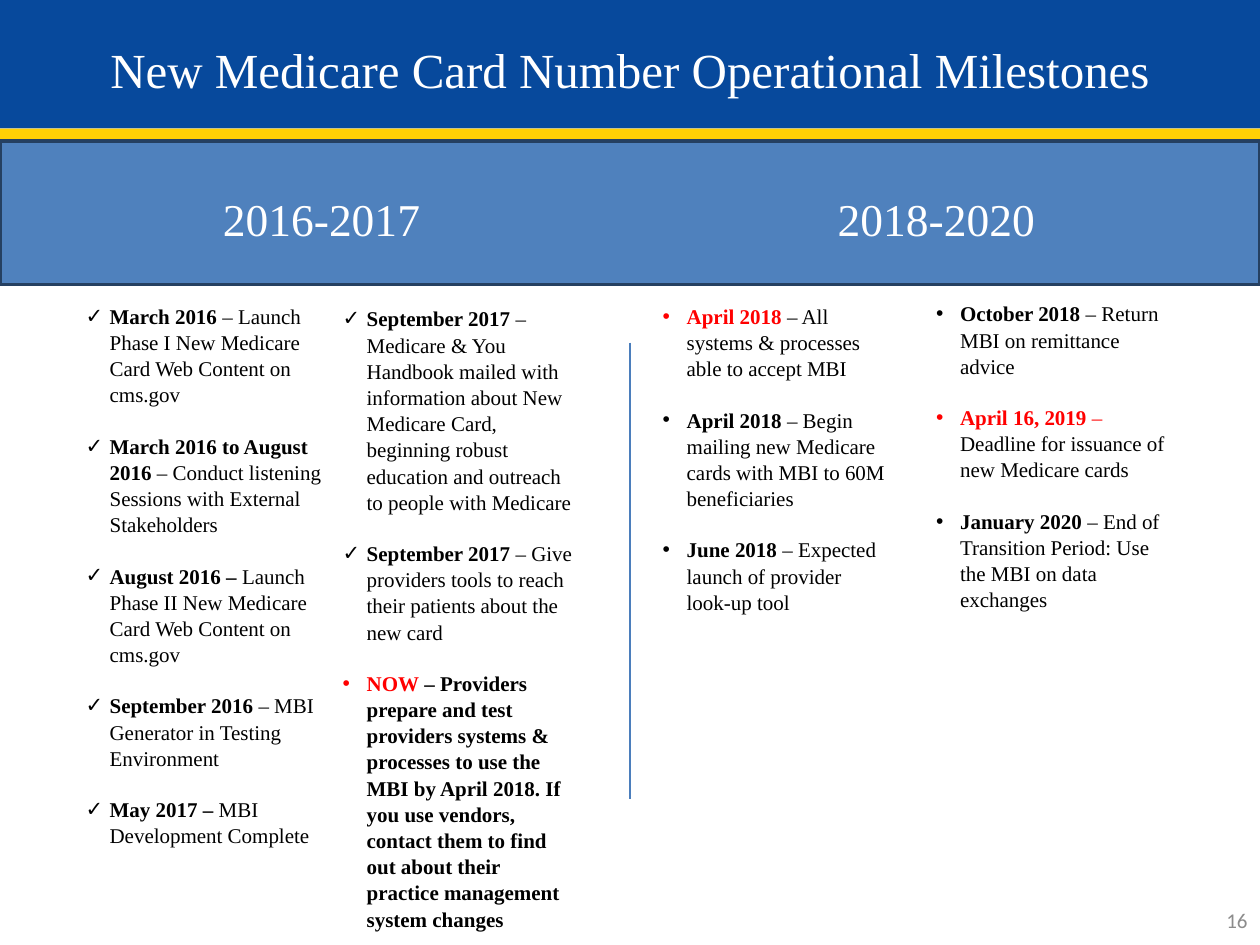
from lxml import etree
from pptx import Presentation
from pptx.dml.color import RGBColor
from pptx.enum.shapes import MSO_CONNECTOR, MSO_SHAPE
from pptx.enum.text import MSO_ANCHOR, MSO_AUTO_SIZE, PP_ALIGN
from pptx.oxml.ns import qn
from pptx.util import Inches, Pt

RECTANGLE = MSO_SHAPE.RECTANGLE
STRAIGHT = MSO_CONNECTOR.STRAIGHT
TOP, MIDDLE = MSO_ANCHOR.TOP, MSO_ANCHOR.MIDDLE
LEFT, CENTER, RIGHT = PP_ALIGN.LEFT, PP_ALIGN.CENTER, PP_ALIGN.RIGHT
NO_AUTOFIT = MSO_AUTO_SIZE.NONE

NAVY = RGBColor(0x07, 0x49, 0x9C)
GOLD = RGBColor(0xFF, 0xD0, 0x04)
BLUE = RGBColor(0x4F, 0x81, 0xBD)
BAND_EDGE = RGBColor(0x25, 0x40, 0x61)
DIVIDER_BLUE = RGBColor(0x4B, 0x7E, 0xBC)
WHITE = RGBColor(0xFF, 0xFF, 0xFF)
BLACK = RGBColor(0x00, 0x00, 0x00)
RED = RGBColor(0xFF, 0x00, 0x00)
GRAY = RGBColor(0x8C, 0x8C, 0x8C)
SERIF = "Times New Roman"
CHECK, DOT = "✓", "•"
INDENT = Inches(0.19)


def style(run, size, color, bold=False, font=SERIF):
    run.font.name = font
    run.font.size = Pt(size)
    run.font.bold = bold
    run.font.color.rgb = color


def place(shape, left, top, width, height):
    shape.left, shape.top = Inches(left), Inches(top)
    shape.width, shape.height = Inches(width), Inches(height)


prs = Presentation()
prs.slide_width, prs.slide_height = Inches(10), Inches(7.5)
slide = prs.slides.add_slide(prs.slide_layouts[4])
shapes = slide.shapes

bands = [(0, 1.02, NAVY, None), (1.02, 0.09, GOLD, None), (1.12, 1.14, BLUE, BAND_EDGE)]
for position, (top, height, fill, edge) in enumerate(bands, start=2):
    band = shapes.add_shape(RECTANGLE, 0, Inches(top), prs.slide_width, Inches(height))
    band.shadow.inherit = False
    band.fill.solid()
    band.fill.fore_color.rgb = fill
    if edge:
        band.line.color.rgb = edge
        band.line.width = Pt(2)
    else:
        band.line.fill.background()
    shapes._spTree.insert(position, band._element)

title = shapes.title
place(title, 0, 0.31, 10, 0.47)
title_frame = title.text_frame
title_frame.text = "New Medicare Card Number Operational Milestones"
title_frame.auto_size = NO_AUTOFIT
title_frame.vertical_anchor = TOP
title_frame.margin_left = title_frame.margin_right = 0
title_frame.margin_top = title_frame.margin_bottom = 0
title_frame.paragraphs[0].alignment = CENTER
style(title_frame.paragraphs[0].runs[0], 28, WHITE)

for left, years in [(1.67, "2016-2017"), (6.55, "2018-2020")]:
    heading = shapes.add_textbox(Inches(left), Inches(1.47), Inches(1.78), Inches(0.54))
    heading.text_frame.text = years
    style(heading.text_frame.paragraphs[0].runs[0], 26, WHITE)

early_2016 = [
    (CHECK, [("March 2016 ", BLACK, True),
             ("– Launch Phase I New Medicare Card Web Content on cms.gov", BLACK, False)]),
    (CHECK, [("March 2016 to August 2016 ", BLACK, True),
             ("– Conduct listening Sessions with External Stakeholders", BLACK, False)]),
    (CHECK, [("August 2016 – ", BLACK, True),
             ("Launch Phase II New Medicare Card Web Content on cms.gov", BLACK, False)]),
    (CHECK, [("September 2016 ", BLACK, True),
             ("– MBI Generator in Testing Environment", BLACK, False)]),
    (CHECK, [("May 2017 – ", BLACK, True), ("MBI Development Complete", BLACK, False)]),
]
late_2017 = [
    (CHECK, [("September 2017 ", BLACK, True),
             ("– Medicare & You Handbook mailed with information about New Medicare Card, "
              "beginning robust education and outreach to people with Medicare", BLACK, False)]),
    (CHECK, [("September 2017 ", BLACK, True),
             ("– Give providers tools to reach their patients about the new card", BLACK, False)]),
    (DOT, [("NOW", RED, True),
           (" – Providers prepare and test providers systems & processes to use the MBI by "
            "April 2018. If you use vendors, contact them to find out about their practice "
            "management system changes", BLACK, True)]),
]
mid_2018 = [
    (DOT, [("April 2018 ", RED, True),
           ("– All systems & processes able to accept MBI", BLACK, False)]),
    (DOT, [("April 2018 ", BLACK, True),
           ("– Begin mailing new Medicare cards with MBI to 60M beneficiaries", BLACK, False)]),
    (DOT, [("June 2018 ", BLACK, True),
           ("– Expected launch of provider look-up tool", BLACK, False)]),
]
through_2020 = [
    (DOT, [("October 2018 ", BLACK, True), ("– Return MBI on remittance advice", BLACK, False)]),
    (DOT, [("April 16, 2019 ", RED, True), ("– ", RED, False),
           ("Deadline for issuance of new Medicare cards", BLACK, False)]),
    (DOT, [("January 2020 ", BLACK, True),
           ("– End of Transition Period: Use the MBI on data exchanges", BLACK, False)]),
]
columns = [
    (1, 0.58, 2.4, 2.09, 4.68, early_2016),
    (2, 2.62, 2.42, 2.03, 5.08, late_2017),
    (3, 5.16, 2.4, 2, 3.67, mid_2018),
    (4, 7.33, 2.38, 2.09, 2.47, through_2020),
]
for index, left, top, width, height, milestones in columns:
    column = slide.placeholders[index]
    place(column, left, top, width, height)
    frame = column.text_frame
    frame.auto_size = NO_AUTOFIT
    frame.vertical_anchor = TOP
    frame.margin_top = 0
    for number, (bullet, pieces) in enumerate(milestones):
        milestone = frame.add_paragraph() if number else frame.paragraphs[0]
        milestone.alignment = LEFT
        milestone.line_spacing = 1.04
        milestone.space_before = Pt(14.35 if number else 0)
        properties = milestone._p.get_or_add_pPr()
        properties.set("marL", str(INDENT))
        properties.set("indent", str(-INDENT))
        etree.SubElement(properties, qn("a:buChar")).set("char", bullet)
        for text, color, bold in pieces:
            run = milestone.add_run()
            run.text = text
            style(run, 12, color, bold)

divider = shapes.add_connector(STRAIGHT, Inches(5), Inches(2.72), Inches(5), Inches(6.34))
divider.line.color.rgb = DIVIDER_BLUE
divider.line.width = Pt(0.75)
etree.SubElement(divider._element.spPr, qn("a:effectLst"))

page_number = shapes.add_textbox(Inches(7.67), Inches(7.1), Inches(2.33), Inches(0.4))
page_number.text_frame.text = "16"
page_number.text_frame.vertical_anchor = MIDDLE
page_number.text_frame.paragraphs[0].alignment = RIGHT
style(page_number.text_frame.paragraphs[0].runs[0], 12, GRAY, font="Calibri")

prs.save("out.pptx")
